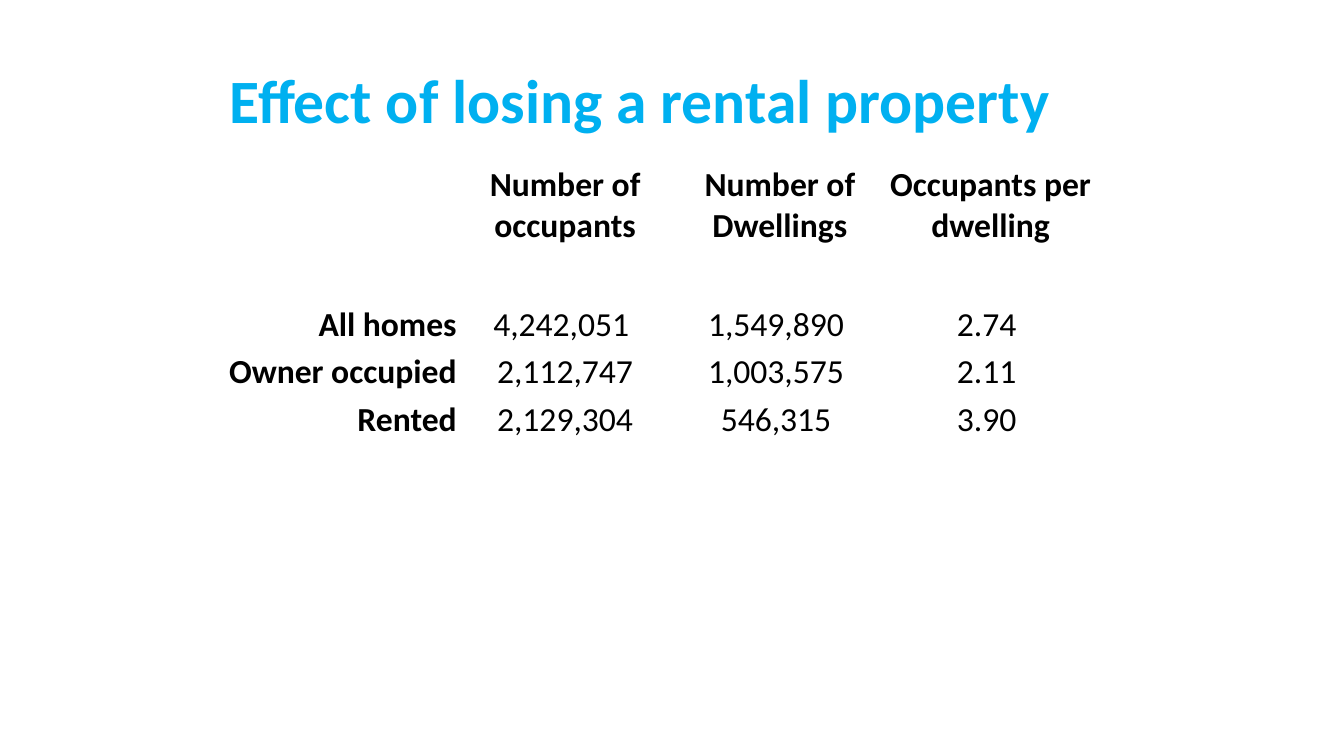
import pptx
import pptx.util
import pptx.dml.color
import pptx.enum.text

PX = 9144
FONT = "Calibri"
BLACK = "000000"
SKY = "00B0F0"
ALIGN = pptx.enum.text.PP_ALIGN
ANCHOR = pptx.enum.text.MSO_ANCHOR

COLUMN_WIDTHS = [236, 213, 213, 205]
ROW_HEIGHTS = [95, 86, 47, 47]
OCCUPANCY = [
    ["", "Number of occupants", "Number of Dwellings", "Occupants per dwelling"],
    ["All homes", "4,242,051 ", "1,549,890 ", "2.74 "],
    ["Owner occupied", "2,112,747", "1,003,575 ", "2.11 "],
    ["Rented", "2,129,304", "546,315 ", "3.90 "],
]


def px(length):
    return pptx.util.Emu(length * PX)


def color(value):
    return pptx.dml.color.RGBColor.from_string(value)


def add_run(paragraph, text, size, bold, fill):
    run = paragraph.add_run()
    run.text = text
    run.font.name = FONT
    run.font.size = pptx.util.Pt(size)
    run.font.bold = bold
    run.font.color.rgb = color(fill)


def add_title(slide, text, left, top, width, height):
    shape = slide.shapes.add_textbox(px(left), px(top), px(width), px(height))
    frame = shape.text_frame
    frame.word_wrap = True
    frame.vertical_anchor = ANCHOR.MIDDLE
    add_run(frame.paragraphs[0], text, 44, True, SKY)


def fill_cell(cell, text, is_header, is_label):
    cell.fill.background()
    cell.margin_left = cell.margin_right = cell.margin_top = px(1)
    cell.margin_bottom = 0
    cell.vertical_anchor = ANCHOR.TOP if is_header else ANCHOR.BOTTOM
    if text:
        paragraph = cell.text_frame.paragraphs[0]
        paragraph.alignment = ALIGN.RIGHT if is_label else ALIGN.CENTER
        add_run(paragraph, text, 24, is_header or is_label, BLACK)


def add_table(slide, rows, left, top):
    frame = slide.shapes.add_table(
        len(rows), len(COLUMN_WIDTHS), px(left), px(top),
        px(sum(COLUMN_WIDTHS)), px(sum(ROW_HEIGHTS)))
    table = frame.table
    table.first_row = False
    table.horz_banding = False
    for column, width in zip(table.columns, COLUMN_WIDTHS):
        column.width = px(width)
    for row, height in zip(table.rows, ROW_HEIGHTS):
        row.height = px(height)
    for row_index, texts in enumerate(rows):
        for column_index, text in enumerate(texts):
            fill_cell(table.cell(row_index, column_index), text,
                      row_index == 0, column_index == 0)


def main():
    presentation = pptx.Presentation()
    presentation.slide_width = px(1333)
    presentation.slide_height = px(750)
    slide = presentation.slides.add_slide(presentation.slide_layouts[6])
    add_title(slide, "Effect of losing a rental property", 218, 36, 900, 125)
    add_table(slide, OCCUPANCY, 218, 162)
    presentation.save("out.pptx")


if __name__ == "__main__":
    main()
